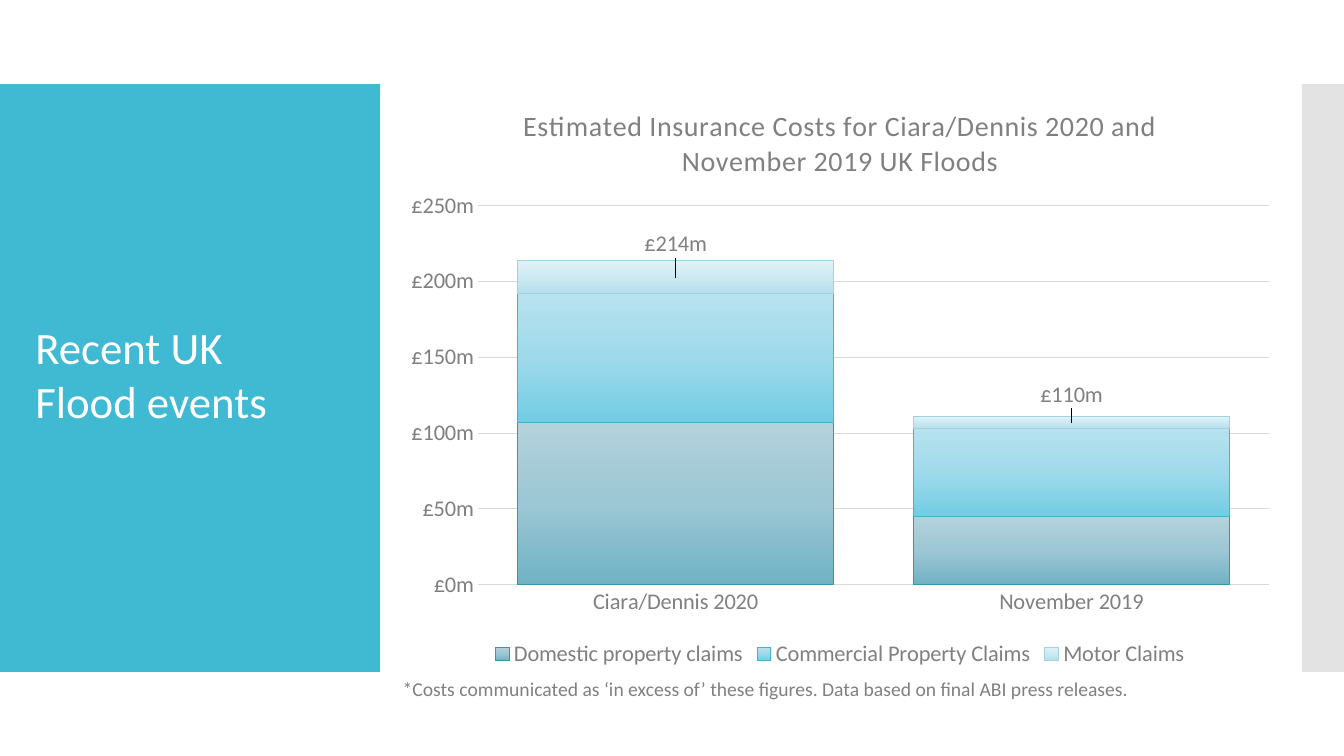
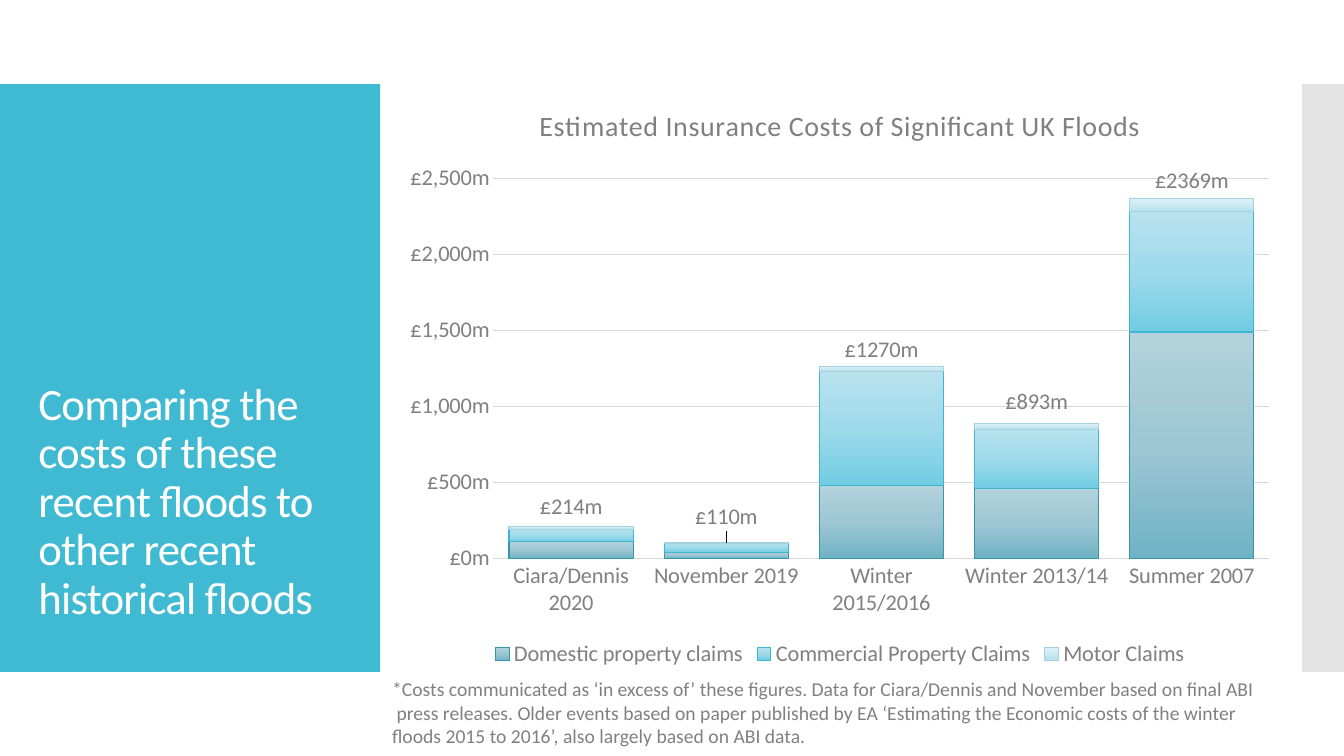
from dataclasses import dataclass
from lxml.etree import SubElement as Sub
from pptx import Presentation
from pptx.chart.data import CategoryChartData as Data
from pptx.dml.color import RGBColor as Rgb
from pptx.enum.chart import XL_CHART_TYPE as Kind, XL_LEGEND_POSITION as Side, XL_TICK_MARK as Tick
from pptx.enum.shapes import MSO_SHAPE as Geo
from pptx.enum.text import MSO_ANCHOR as Anchor, MSO_AUTO_SIZE as Fit, PP_ALIGN as Align
from pptx.oxml import parse_xml
from pptx.oxml.ns import nsdecls, qn
from pptx.util import Pt

SCALE = 9525


@dataclass(frozen=True)
class Theme:
    """Colours, type sizes and number format of the deck."""
    face: str = "Calibri"
    teal: str = "40BAD2"
    pale: str = "C8C8C8"
    white: str = "FFFFFF"
    text: str = "808080"
    grid: str = "D9D9D9"
    head: int = 32
    top: int = 20
    label: int = 16
    note: int = 14
    money: str = '"£"#,##0"m"'
    fills: tuple = (
        (("B3D2DC", "9DC7D4", "70B2C4"), "3497AA"),
        (("B7E2EE", "9FDAEB", "71CCE3"), "3FB6CD"),
        (("E1F2F7", "CDEAF3", "B3DFEC"), "A3D1DE"),
    )


class Deck:
    """Holds the style and the current slide."""

    frame = (374, 80, 852, 560)

    def __init__(self, theme):
        self.theme = theme
        self.pres = Presentation()
        self.pres.slide_width = 1280 * SCALE
        self.pres.slide_height = 720 * SCALE
        self.base = self.pres.slide_layouts[5]
        self.slide = None

    def box(self, *sizes):
        return [size * SCALE for size in sizes]

    def font(self, font, size, color):
        font.name = self.theme.face
        font.size = Pt(size)
        font.bold = False
        font.color.rgb = Rgb.from_string(color)

    def run(self, para, text, size, color, gap=0):
        run = para.add_run()
        run.text = text
        self.font(run.font, size, color)
        if gap:
            run.font._element.set("spc", str(gap))

    def line(self, line, color):
        line.color.rgb = Rgb.from_string(color)
        line.width = Pt(0.75)

    def page(self):
        self.slide = self.pres.slides.add_slide(self.base)
        if len(self.pres.slides) == 1:
            self.band(0, 362, self.theme.teal)
            self.band(1240, 40, self.theme.pale, 50)

    def band(self, left, width, color, alpha=100):
        band = self.slide.shapes.add_shape(Geo.RECTANGLE, *self.box(left, 80, width, 560))
        band.shadow.inherit = False
        band.line.fill.background()
        band.fill.solid()
        band.fill.fore_color.rgb = Rgb.from_string(color)
        if alpha < 100:
            tint = band.element.spPr.xpath(".//a:srgbClr")[0]
            Sub(tint, qn("a:alpha")).set("val", str(alpha * 1000))
        self.base.element.cSld.spTree.insert(2, band.element)

    def title(self, text, area, anchor, space=1.0, gap=0):
        title = self.slide.shapes.title
        title.left, title.top, title.width, title.height = self.box(*area)
        frame = title.text_frame
        frame.word_wrap = True
        frame.auto_size = Fit.NONE
        frame.vertical_anchor = anchor
        para = frame.paragraphs[0]
        para.alignment = Align.LEFT
        para.line_spacing = space
        self.run(para, text, self.theme.head, self.theme.white, gap)

    def note(self, area, *lines):
        frame = self.slide.shapes.add_textbox(*self.box(*area)).text_frame
        frame.word_wrap = True
        for at, text in enumerate(lines):
            para = frame.add_paragraph() if at else frame.paragraphs[0]
            self.run(para, text, self.theme.note, self.theme.text)

    def chart(self, head, cats, rows, sums, lifts, plot):
        look = self.theme
        data = Data(number_format=look.money)
        data.categories = cats
        for name, vals in rows:
            data.add_series(name, vals)
        chart = self.slide.shapes.add_chart(Kind.COLUMN_STACKED, *self.box(*self.frame), data).chart
        self.font(chart.font, look.label, look.text)
        chart.has_title = True
        para = chart.chart_title.text_frame.paragraphs[0]
        self.run(para, head, look.top, look.text, 30)
        chart.chart_title.include_in_layout = False
        chart.has_legend = True
        chart.legend.position = Side.BOTTOM
        chart.legend.include_in_layout = False
        self.font(chart.legend.font, look.label, look.text)
        self.axes(chart)
        bars = chart.plots[0]
        bars.gap_width, bars.overlap = 25, 100
        bars.vary_by_categories = False
        for bar, (stops, edge) in zip(bars.series, look.fills):
            self.blend(chart, bar, stops)
            self.line(bar.format.line, edge)
        self.sums(chart, bars.series[-1], sums, lifts)
        self.place(chart, plot)

    def axes(self, chart):
        look = self.theme
        for axis in (chart.category_axis, chart.value_axis):
            axis.major_tick_mark = axis.minor_tick_mark = Tick.NONE
            self.font(axis.tick_labels.font, look.label, look.text)
        self.line(chart.category_axis.format.line, look.grid)
        cost = chart.value_axis
        cost.format.line.fill.background()
        cost.has_major_gridlines = True
        self.line(cost.major_gridlines.format.line, look.grid)
        cost.tick_labels.number_format = look.money
        cost.tick_labels.number_format_is_linked = False

    def blend(self, chart, bar, stops):
        fill = bar.format.fill
        fill.gradient()
        fill.gradient_angle = 270
        old = chart.element.xpath(".//a:gsLst")[-1]
        new = parse_xml(f"<a:gsLst {nsdecls('a')}/>")
        for at, color in enumerate(stops):
            stop = Sub(new, qn("a:gs"), pos=str(at * 50000))
            Sub(stop, qn("a:srgbClr"), val=color)
        old.getparent().replace(old, new)

    def sums(self, chart, bar, sums, lifts):
        for at, (text, lift) in enumerate(zip(sums, lifts)):
            label = bar.points[at].data_label
            para = label.text_frame.paragraphs[0]
            self.run(para, text, self.theme.label, self.theme.text)
            mark = chart.element.xpath(".//c:dLbl")[at]
            mark.insert(1, self.layout(x=0, y=-lift / self.frame[3]))

    def place(self, chart, plot):
        left, top, width, height = self.frame
        x, y, w, h = plot
        area = chart.element.xpath(".//c:plotArea")[0]
        for old in area.findall(qn("c:layout")):
            area.remove(old)
        area.insert(0, self.layout(
            layoutTarget="inner", xMode="edge", yMode="edge",
            x=(x - left) / width, y=(y - top) / height, w=w / width, h=h / height))

    def layout(self, **parts):
        root = parse_xml(f"<c:layout {nsdecls('c')}/>")
        hand = Sub(root, qn("c:manualLayout"))
        for name, val in parts.items():
            Sub(hand, qn("c:" + name), val=str(val))
        return root


def main():
    deck = Deck(Theme())
    names = ("Domestic property claims", "Commercial Property Claims", "Motor Claims")
    cats = ["Ciara/Dennis 2020", "November 2019"]
    sums = ["£214m", "£110m"]

    deck.page()
    deck.title("Recent UK Flood events", (24, 96, 298, 520), Anchor.MIDDLE)
    deck.chart(
        "Estimated Insurance Costs for Ciara/Dennis 2020 and November 2019 UK Floods",
        cats, zip(names, ((107, 45), (85, 58), (22, 8))),
        sums, (31, 26), (455, 196, 754, 361))
    deck.note(
        (374, 640, 800, 33),
        "*Costs communicated as ‘in excess of’ these figures. Data based on final ABI press releases.")

    deck.page()
    deck.title(
        "Comparing the costs of these recent floods to other recent historical floods",
        (27, 120, 298, 479), Anchor.BOTTOM, 0.9, -60)
    deck.chart(
        "Estimated Insurance Costs of Significant UK Floods",
        cats + ["Winter 2015/2016", "Winter 2013/14", "Summer 2007"],
        zip(names, ((110, 40, 480, 460, 1490), (80, 60, 750, 390, 790), (22, 8, 36, 37, 90))),
        sums + ["£1270m", "£893m", "£2369m"], (20, 24, 18, 23, 23), (470, 170, 739, 362))
    deck.note(
        (364, 640, 880, 78),
        "*Costs communicated as ‘in excess of’ these figures. Data for Ciara/Dennis and November based on final ABI",
        " press releases. Older events based on paper published by EA ‘Estimating the Economic costs of the winter",
        "floods 2015 to 2016’, also largely based on ABI data.")

    deck.pres.save("out.pptx")


if __name__ == "__main__":
    main()
